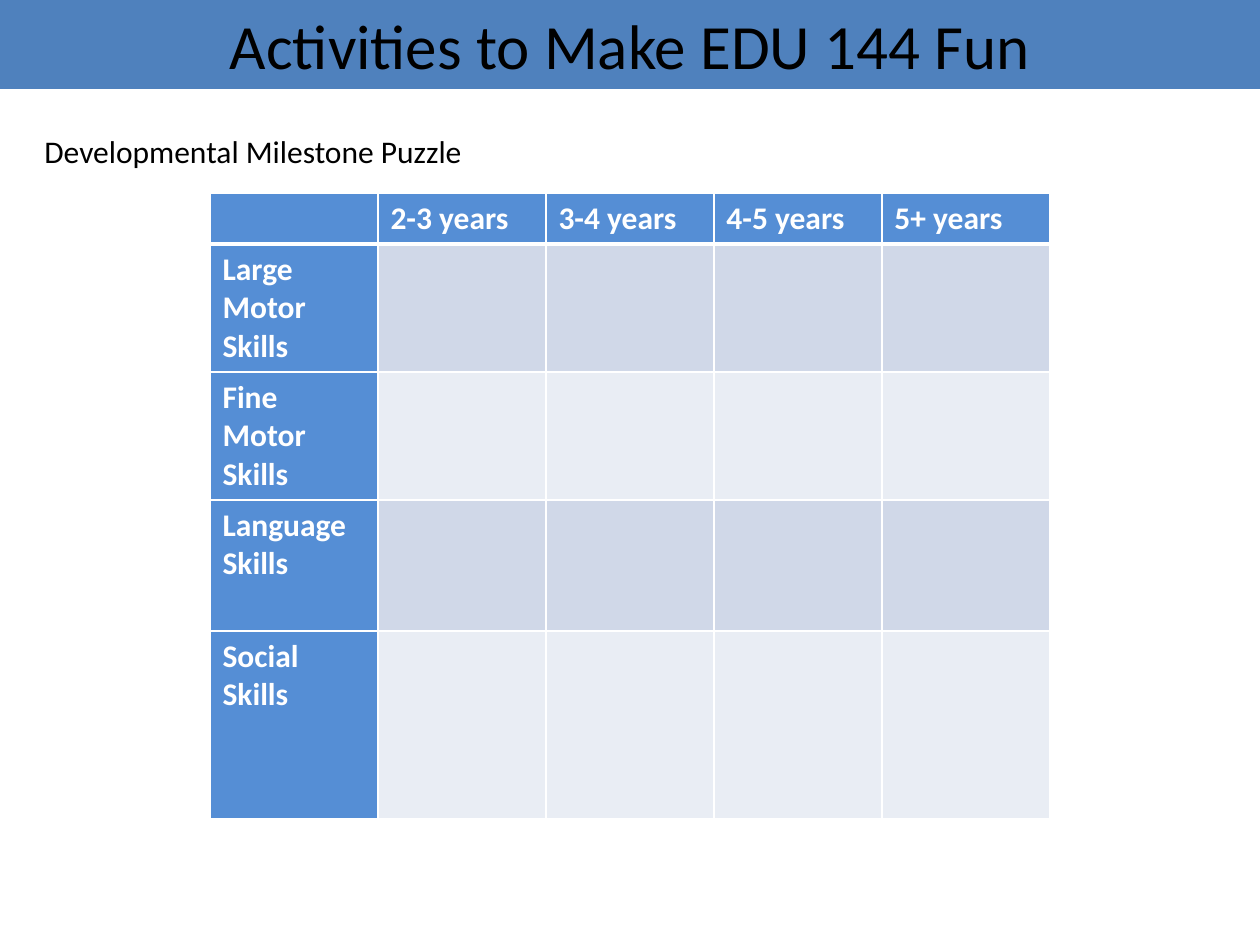
from dataclasses import dataclass

from lxml.etree import SubElement
from pptx import Presentation
from pptx.dml.color import RGBColor
from pptx.enum.text import MSO_ANCHOR, PP_ALIGN
from pptx.oxml.ns import qn
from pptx.util import Emu, Pt

EMU_PER_PX = 914400 // 126
FONT = "Calibri"
BLACK = "000000"
WHITE = "FFFFFF"
TITLE_BLUE = "4F81BD"
HEADING_BLUE = "558ED5"
BANDS = ("D0D8E8", "E9EDF4")
AGES = ("2-3 years", "3-4 years", "4-5 years", "5+ years")
COLUMN_WIDTH = 168
HEADER_HEIGHT = 51


@dataclass(frozen=True)
class Place:
    left: int
    top: int
    width: int
    height: int


@dataclass(frozen=True)
class SkillRow:
    name: str
    height: int


SKILLS = (
    SkillRow("Large Motor Skills", 126),
    SkillRow("Fine Motor Skills", 126),
    SkillRow("Language Skills", 131),
    SkillRow("Social Skills", 188),
)


def px(length: int) -> Emu:
    return Emu(length * EMU_PER_PX)


def color(value: str) -> RGBColor:
    return RGBColor.from_string(value)


def set_text(frame, text: str, size: int, hue: str, bold: bool = False) -> None:
    frame.text = text
    para = frame.paragraphs[0]
    for font in (para.font, *(span.font for span in para.runs)):
        font.name = FONT
        font.size = Pt(size)
        font.bold = bold
        font.color.rgb = color(hue)


def set_borders(cell, widths: dict[str, int]) -> None:
    properties = cell._tc.get_or_add_tcPr()
    for position, (side, width) in enumerate(widths.items()):
        line = SubElement(properties, qn(f"a:ln{side}"), w=str(Pt(width)))
        fill = SubElement(line, qn("a:solidFill"))
        SubElement(fill, qn("a:srgbClr"), val=WHITE)
        properties.insert(position, line)


def draw_title(slide, text: str, place: Place) -> None:
    title = slide.shapes.title
    title.left, title.top = px(place.left), px(place.top)
    title.width, title.height = px(place.width), px(place.height)
    title.fill.solid()
    title.fill.fore_color.rgb = color(TITLE_BLUE)
    set_text(title.text_frame, text, 36, BLACK)
    title.text_frame.vertical_anchor = MSO_ANCHOR.MIDDLE
    title.text_frame.paragraphs[0].alignment = PP_ALIGN.CENTER


def draw_label(slide, text: str, place: Place) -> None:
    box = slide.shapes.add_textbox(
        px(place.left), px(place.top), px(place.width), px(place.height)
    )
    box.text_frame.word_wrap = True
    set_text(box.text_frame, text, 18, BLACK)


def draw_milestones(slide, left: int, top: int) -> None:
    heights = [HEADER_HEIGHT, *(skill.height for skill in SKILLS)]
    contents = [("", *AGES)]
    contents += [(skill.name, *("" for _ in AGES)) for skill in SKILLS]
    columns = len(AGES) + 1
    table = slide.shapes.add_table(
        len(heights), columns, px(left), px(top),
        px(columns * COLUMN_WIDTH), px(sum(heights)),
    ).table
    for column in table.columns:
        column.width = px(COLUMN_WIDTH)
    for row_index, (height, texts) in enumerate(zip(heights, contents)):
        table.rows[row_index].height = px(height)
        for column_index, text in enumerate(texts):
            cell = table.cell(row_index, column_index)
            heading = row_index == 0 or column_index == 0
            cell.fill.solid()
            cell.fill.fore_color.rgb = color(
                HEADING_BLUE if heading else BANDS[(row_index - 1) % 2]
            )
            set_text(cell.text_frame, text, 18, WHITE, bold=True)
            set_borders(cell, {
                "L": 1,
                "R": 1,
                "T": 3 if row_index == 1 else 1,
                "B": 3 if row_index == 0 else 1,
            })


def main() -> None:
    deck = Presentation()
    deck.slide_width, deck.slide_height = px(1260), px(945)
    page = deck.slides.add_slide(deck.slide_layouts[5])
    draw_title(page, "Activities to Make EDU 144 Fun", Place(0, 0, 1260, 89))
    draw_milestones(page, 210, 193)
    draw_label(page, "Developmental Milestone Puzzle", Place(32, 126, 651, 51))
    deck.save("out.pptx")


if __name__ == "__main__":
    main()
